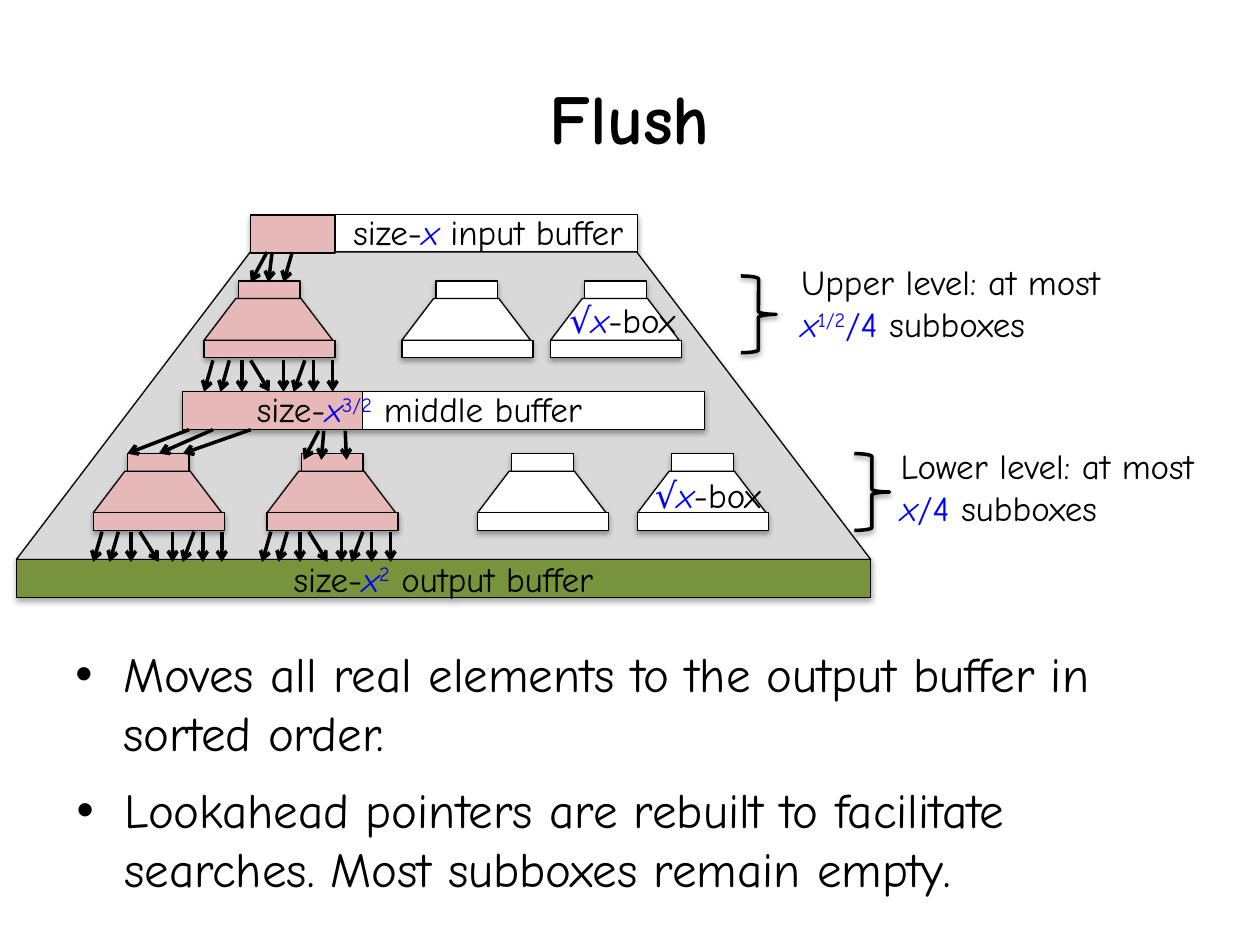
from lxml import etree
from pptx import Presentation
from pptx.dml.color import RGBColor
from pptx.enum.shapes import MSO_CONNECTOR, MSO_SHAPE
from pptx.enum.text import MSO_ANCHOR, MSO_AUTO_SIZE, PP_ALIGN
from pptx.oxml.ns import qn
from pptx.util import Inches, Pt

RECTANGLE = MSO_SHAPE.RECTANGLE
TRAPEZOID = MSO_SHAPE.TRAPEZOID
RIGHT_BRACE = MSO_SHAPE.RIGHT_BRACE
STRAIGHT = MSO_CONNECTOR.STRAIGHT
MIDDLE = MSO_ANCHOR.MIDDLE
TOP = MSO_ANCHOR.TOP
FIT_SHAPE = MSO_AUTO_SIZE.SHAPE_TO_FIT_TEXT
CENTER = PP_ALIGN.CENTER
LEFT = PP_ALIGN.LEFT

FONT = "Comic Neue"
BLACK, WHITE, BLUE = "000000", "FFFFFF", "0000FF"
PINK, GRAY, GREEN = "E6B9B8", "D9D9D9", "77933C"
SLOPE = 0.761
BUFFER_HEIGHT = 0.3

PLAIN = (BLACK, False, None)
MATH = (BLUE, False, None)
VARIABLE = (BLUE, True, None)
POWER = (BLUE, False, "30000")
BOX_LABEL = [("√", MATH), ("x", VARIABLE), ("-box", PLAIN)]

FAN_STARTS = [0.03, 0.16, 0.26, 0.33, 0.59, 0.76, 0.83, 0.98]
FAN_ENDS = [-0.04, 0.09, 0.26, 0.48, 0.59, 0.67, 0.83, 0.98]


def color(value):
    return RGBColor.from_string(value)


def inches(box):
    return [Inches(length) for length in box]


def add_shadow(shape, opacity, distance):
    effects = etree.SubElement(shape._element.spPr, qn("a:effectLst"))
    shadow = etree.SubElement(
        effects, qn("a:outerShdw"), blurRad=str(Pt(3.1)), dist=str(Pt(distance)),
        dir="5400000", rotWithShape="0")
    black = etree.SubElement(shadow, qn("a:srgbClr"), val=BLACK)
    etree.SubElement(black, qn("a:alpha"), val=str(opacity * 1000))


def add_block(shapes, kind, box, fill, shadowed=True):
    shape = shapes.add_shape(kind, *inches(box))
    if kind == TRAPEZOID:
        shape.adjustments[0] = SLOPE
    shape.fill.solid()
    shape.fill.fore_color.rgb = color(fill)
    shape.line.color.rgb = color(BLACK)
    shape.line.width = Pt(0.75)
    if shadowed:
        add_shadow(shape, 35, 1.8)
    else:
        shape.shadow.inherit = False
    return shape


def write_runs(shape, pieces, size=20, alignment=LEFT, bold=False):
    paragraph = shape.text_frame.paragraphs[0]
    paragraph.alignment = alignment
    for text, (run_color, italic, baseline) in pieces:
        run = paragraph.add_run()
        run.text = text
        run.font.name = FONT
        run.font.size = Pt(size)
        run.font.bold = bold
        run.font.italic = italic
        run.font.color.rgb = color(run_color)
        if baseline:
            run.font._element.set("baseline", baseline)
    return paragraph


def add_label(slide, box, pieces, wrap=False, alignment=LEFT):
    label = slide.shapes.add_textbox(*inches(box))
    label.text_frame.word_wrap = wrap
    label.text_frame.auto_size = FIT_SHAPE
    write_runs(label, pieces, alignment=alignment)


def add_title(slide, box):
    title = slide.shapes.add_textbox(*inches(box))
    title.text_frame.word_wrap = True
    title.text_frame.vertical_anchor = MIDDLE
    write_runs(title, [("Flush", PLAIN)], 40, CENTER, True)


def add_bullet(slide, box, text):
    body = slide.shapes.add_textbox(*inches(box))
    body.text_frame.word_wrap = True
    body.text_frame.vertical_anchor = TOP
    paragraph = write_runs(body, [(text, PLAIN)], 28)
    paragraph.space_before = Pt(5.6)
    properties = paragraph._p.get_or_add_pPr()
    properties.set("marL", str(Inches(0.38)))
    properties.set("indent", str(-Inches(0.38)))
    etree.SubElement(properties, qn("a:buFont"), typeface="Arial")
    etree.SubElement(properties, qn("a:buChar"), char="•")


def add_subbox(slide, left, top, fill):
    shapes = slide.shapes.add_group_shape().shapes
    add_block(shapes, RECTANGLE, (left + 0.27, top, 0.49, 0.14), fill)
    add_block(shapes, TRAPEZOID, (left, top + 0.14, 1.02, 0.33), fill)
    add_block(shapes, RECTANGLE, (left, top + 0.47, 1.04, 0.14), fill)


def add_arrow(slide, start, end):
    arrow = slide.shapes.add_connector(STRAIGHT, *inches(start + end))
    arrow.line.color.rgb = color(BLACK)
    arrow.line.width = Pt(2)
    etree.SubElement(arrow.line._get_or_add_ln(), qn("a:tailEnd"), type="arrow")
    etree.SubElement(arrow._element.spPr, qn("a:effectLst"))


def add_arrows(slide, left, top, bottom, starts, ends):
    for start, end in zip(starts, ends):
        add_arrow(slide, (left + start, top), (left + end, bottom))


def add_level(slide, box, pieces, brace_left, brace_top):
    brace = slide.shapes.add_shape(
        RIGHT_BRACE, *inches((brace_left, brace_top, 0.28, 0.61)))
    brace.fill.background()
    brace.line.color.rgb = color(BLACK)
    brace.line.width = Pt(2)
    add_shadow(brace, 38, 1.6)
    add_label(slide, box, pieces, wrap=True)


def add_diagram(slide, left, top):
    width, slope_height = 6.78, 2.44
    slope_top = top + BUFFER_HEIGHT
    output_top = slope_top + slope_height
    input_left, middle_left = left + 1.86, left + 1.32
    middle_top = top + 1.41
    upper_top, lower_top = top + 0.53, top + 1.9
    shapes = slide.shapes

    add_block(shapes, RECTANGLE, (input_left, top, 3.07, BUFFER_HEIGHT), WHITE)
    add_block(shapes, TRAPEZOID, (left, slope_top, width, slope_height), GRAY)
    output = add_block(shapes, RECTANGLE, (left, output_top, width, BUFFER_HEIGHT), GREEN)
    output.text_frame.vertical_anchor = MIDDLE
    write_runs(output, [("size-", PLAIN), ("x", VARIABLE), ("2", POWER),
                        (" output buffer", PLAIN)], alignment=CENTER)
    add_block(shapes, RECTANGLE, (middle_left, middle_top, 4.14, BUFFER_HEIGHT), WHITE)

    for offset, fill in [(1.49, PINK), (3.06, WHITE), (4.24, WHITE)]:
        add_subbox(slide, left + offset, upper_top, fill)
    for offset, fill in [(0.61, PINK), (1.99, PINK), (3.66, WHITE), (4.93, WHITE)]:
        add_subbox(slide, left + offset, lower_top, fill)
    add_label(slide, (left + 4.29, upper_top + 0.09, 1.14, 0.44), BOX_LABEL)
    add_label(slide, (left + 4.97, lower_top + 0.11, 1.14, 0.44), BOX_LABEL)

    add_block(shapes, RECTANGLE, (input_left, top + 0.01, 0.67, BUFFER_HEIGHT), PINK, False)
    add_label(slide, (left + 2.39, top - 0.08, 2.71, 0.44),
              [("size-", PLAIN), ("x", VARIABLE), (" input buffer", PLAIN)],
              alignment=CENTER)
    add_block(shapes, RECTANGLE, (middle_left, middle_top, 1.43, BUFFER_HEIGHT), PINK, False)
    add_label(slide, (left + 1.81, middle_top - 0.08, 3.39, 0.44),
              [("size-", PLAIN), ("x", VARIABLE), ("3/2", POWER),
               (" middle buffer", PLAIN)], wrap=True)

    add_arrows(slide, left + 1.53, middle_top - 0.25, middle_top, FAN_STARTS, FAN_ENDS)
    for offset in (0.65, 1.99):
        add_arrows(slide, left + offset, output_top - 0.22, output_top + 0.02,
                   FAN_STARTS, FAN_ENDS)
    add_arrows(slide, input_left, slope_top, upper_top + 0.01,
               [0.13, 0.17, 0.33], [0, 0.14, 0.26])
    middle_bottom = middle_top + BUFFER_HEIGHT
    add_arrows(slide, middle_left, middle_bottom, lower_top,
               [0.05, 0.24, 0.54], [-0.44, -0.19, 0])
    add_arrows(slide, middle_left, middle_bottom + 0.01, lower_top + 0.05,
               [1.08, 1.12, 1.29], [0.96, 1.1, 1.3])


def main():
    presentation = Presentation()
    presentation.slide_width = Inches(10)
    presentation.slide_height = Inches(7.5)
    slide = presentation.slides.add_slide(presentation.slide_layouts[6])
    add_title(slide, (0.5, 0.3, 9, 1.25))
    add_diagram(slide, 0.13, 1.7)
    add_level(slide, (6.26, 2.02, 2.95, 0.77),
              [("Upper level: at most ", PLAIN), ("x", VARIABLE), ("1/2", POWER),
               ("/4 ", MATH), ("subboxes", PLAIN)], 5.88, 2.19)
    add_level(slide, (7.05, 3.48, 2.95, 0.77),
              [("Lower level: at most ", PLAIN), ("x", VARIABLE),
               ("/4 ", MATH), ("subboxes", PLAIN)], 6.78, 3.6)
    add_bullet(slide, (0.5, 5.06, 9, 1.08),
               "Moves all real elements to the output buffer in sorted order.")
    add_bullet(slide, (0.51, 6.14, 9, 1.08),
               "Lookahead pointers are rebuilt to facilitate searches. "
               "Most subboxes remain empty.")
    presentation.save("out.pptx")


if __name__ == "__main__":
    main()
